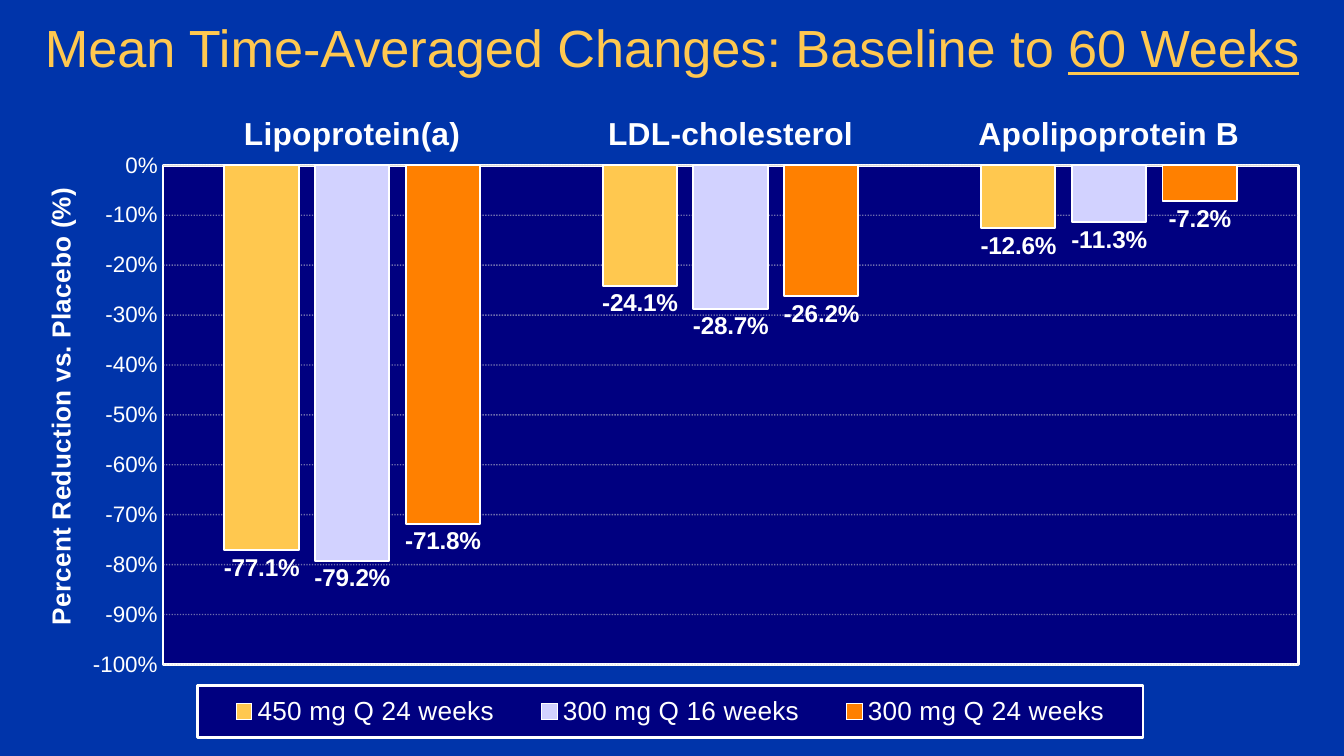
from pptx import Presentation
from pptx.chart.data import CategoryChartData
from pptx.dml.color import RGBColor
from pptx.enum.chart import XL_CHART_TYPE, XL_LABEL_POSITION, XL_LEGEND_POSITION, XL_TICK_LABEL_POSITION, XL_TICK_MARK
from pptx.enum.dml import MSO_LINE
from pptx.enum.text import MSO_ANCHOR, PP_ALIGN
from pptx.oxml import parse_xml
from pptx.oxml.ns import nsdecls, qn
from pptx.util import Pt

COLUMN = XL_CHART_TYPE.COLUMN_CLUSTERED
OUTSIDE = XL_LABEL_POSITION.OUTSIDE_END
BOTTOM = XL_LEGEND_POSITION.BOTTOM
HIGH = XL_TICK_LABEL_POSITION.HIGH
NO_TICK = XL_TICK_MARK.NONE
DOTTED = MSO_LINE.ROUND_DOT
MIDDLE = MSO_ANCHOR.MIDDLE
CENTER = PP_ALIGN.CENTER
PX = 914400 / 134.4
WHITE, NAVY, GOLD = "FFFFFF", "000080", "FFC850"
CHART_BOX = 26, 99, 1293, 645


def set_font(font, size, color=WHITE, bold=False):
    values = {"name": "Arial", "size": Pt(size), "bold": bold}
    for name, value in values.items():
        setattr(font, name, value)
    font.color.rgb = RGBColor.from_string(color)


def set_layout(parent, index, target, **places):
    for old in parent.findall(qn("c:layout")):
        parent.remove(old)
    modes = "".join(f'<c:{k}Mode val="edge"/>' for k in "xy")
    sizes = "".join(f'<c:{k} val="{v}"/>' for k, v in places.items())
    parent.insert(index, parse_xml(
        f'<c:layout {nsdecls("c")}><c:manualLayout>{target}{modes}{sizes}'
        '</c:manualLayout></c:layout>'))


prs = Presentation()
prs.slide_width, prs.slide_height = round(1344 * PX), round(756 * PX)
s = prs.slides.add_slide(prs.slide_layouts[6])
s.background.fill.solid()
s.background.fill.fore_color.rgb = RGBColor.from_string("0034AA")

data = CategoryChartData(number_format="0.0%")
data.categories = ["Lipoprotein(a)", "LDL-cholesterol", "Apolipoprotein B"]
doses = [
    ("450 mg Q 24 weeks", (-0.771, -0.241, -0.126), "FFC84F"),
    ("300 mg Q 16 weeks", (-0.792, -0.287, -0.113), "D2D2FF"),
    ("300 mg Q 24 weeks", (-0.718, -0.262, -0.072), "FF8000"),
]
for name, values, color in doses:
    data.add_series(name, values)
chart = s.shapes.add_chart(COLUMN, *[round(v * PX) for v in CHART_BOX], data).chart
set_font(chart.font, 10, "000000")
chart.has_title = False

plot = chart.plots[0]
plot.gap_width, plot.overlap, plot.vary_by_categories = 165, -22, False
for series, (name, values, color) in zip(plot.series, doses):
    series.invert_if_negative = False
    series.format.fill.solid()
    series.format.fill.fore_color.rgb = RGBColor.from_string(color)
    series.format.line.color.rgb = RGBColor.from_string(WHITE)
    series.format.line.width = Pt(1)
    labels = series.data_labels
    label_format = {"show_value": True, "position": OUTSIDE,
                    "number_format": "0.0%", "number_format_is_linked": False}
    for key, value in label_format.items():
        setattr(labels, key, value)
    set_font(labels.font, 13, bold=True)

cat, val = chart.category_axis, chart.value_axis
for axis in (cat, val):
    axis.major_tick_mark = axis.minor_tick_mark = NO_TICK
cat.tick_label_position = HIGH
set_font(cat.tick_labels.font, 17, bold=True)
cat.format.line.color.rgb = RGBColor.from_string("D9D9D9")
cat.format.line.width = Pt(0.75)

val_format = {"minimum_scale": -1, "maximum_scale": 0, "major_unit": 0.1,
              "has_major_gridlines": True, "has_title": True}
for key, value in val_format.items():
    setattr(val, key, value)
val.tick_labels.number_format = "0%"
val.tick_labels.number_format_is_linked = False
set_font(val.tick_labels.font, 12)
val.format.line.fill.background()
grid = val.major_gridlines.format.line
grid.color.rgb = RGBColor.from_string("D9D9D9")
grid.width, grid.dash_style = Pt(0.75), DOTTED
grid_color = val.major_gridlines._xAx.find(".//" + qn("c:majorGridlines")).find(".//" + qn("a:srgbClr"))
grid_color.append(parse_xml(f'<a:alpha {nsdecls("a")} val="51000"/>'))

tf = val.axis_title.text_frame
r = tf.paragraphs[0].add_run()
r.text = "Percent Reduction vs. Placebo (%)"
set_font(r.font, 14, bold=True)
tf._txBody.find(qn("a:bodyPr")).set("rot", "-5400000")
set_layout(val.axis_title._element, 1, "", x=0.01, y=0.13)

chart.has_legend = True
legend = chart.legend
legend.position, legend.include_in_layout = BOTTOM, False
set_font(legend.font, 14)
set_layout(legend._element, 1, "", x=0.133, y=0.909, w=0.731, h=0.081)

plot_area = chart._chartSpace.chart.plotArea
set_layout(plot_area, 0, '<c:layoutTarget val="inner"/>', x=0.106, y=0.103, w=0.878, h=0.774)
box = (f'<c:spPr {nsdecls("c", "a")}><a:solidFill><a:srgbClr val="{NAVY}"/></a:solidFill>'
       f'<a:ln w="19050"><a:solidFill><a:srgbClr val="{WHITE}"/></a:solidFill></a:ln></c:spPr>')
plot_area.append(parse_xml(box))
legend._element.find(qn("c:txPr")).addprevious(parse_xml(box))

title = s.shapes.add_textbox(0, 0, prs.slide_width, round(94 * PX))
tf = title.text_frame
tf.word_wrap, tf.vertical_anchor = True, MIDDLE
p = tf.paragraphs[0]
p.alignment = CENTER
for text, underline in (("Mean Time-Averaged Changes: Baseline to ", False), ("60 Weeks", True)):
    r = p.add_run()
    r.text = text
    set_font(r.font, 28, GOLD)
    r.font.underline = underline
    r._r.rPr.find(qn("a:solidFill")).addnext(parse_xml(
        f'<a:effectLst {nsdecls("a")}><a:outerShdw blurRad="38100" dist="38100" dir="2700000">'
        '<a:srgbClr val="000000"><a:alpha val="43000"/></a:srgbClr></a:outerShdw></a:effectLst>'))

prs.save("out.pptx")
